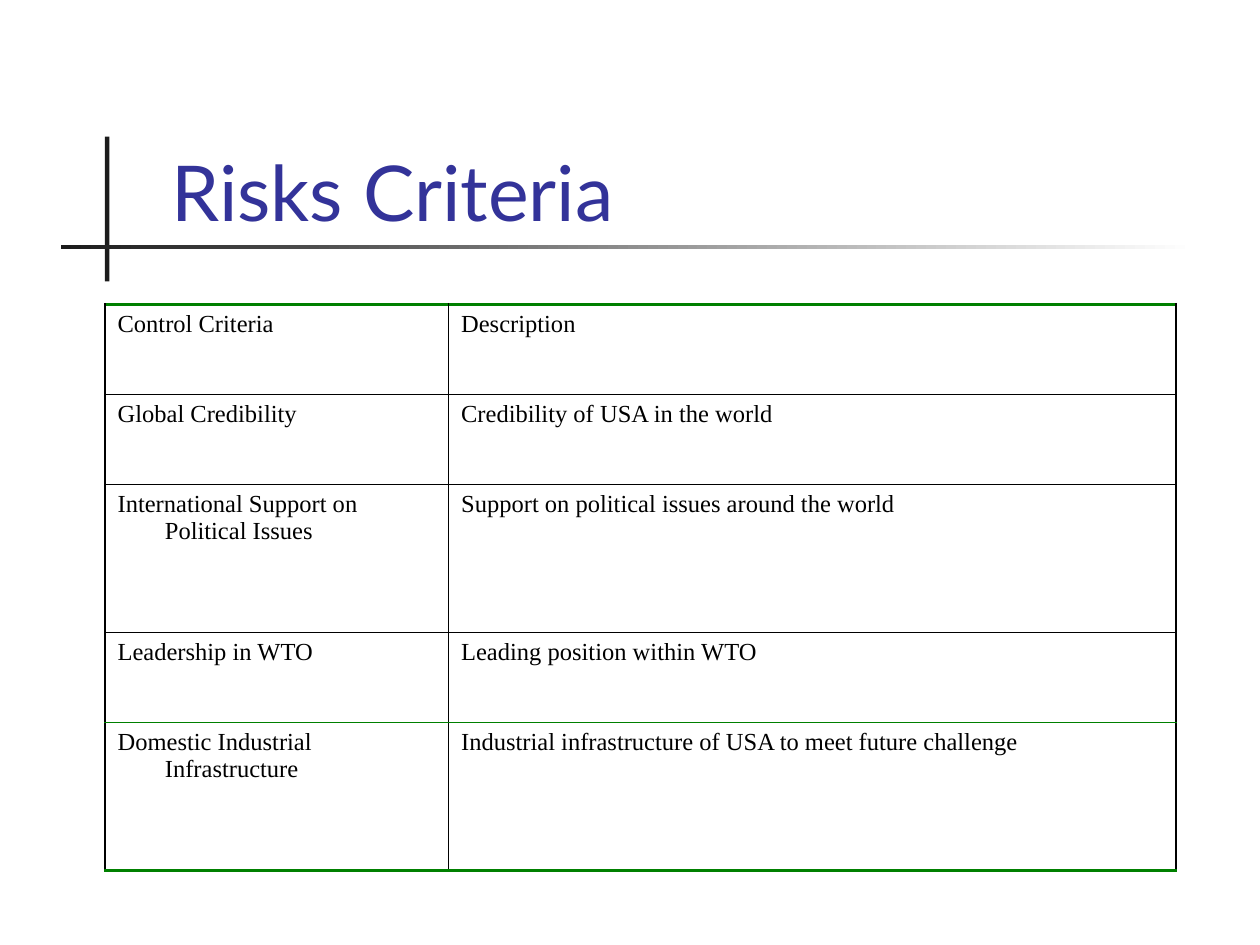
import pptx
import pptx.util
import pptx.dml.color
import pptx.enum.shapes
import pptx.enum.text
import pptx.oxml
import pptx.oxml.ns

Pt = pptx.util.Pt
BLACK, GREEN, DARK = "000000", "008000", "1C1C1C"
ROWS = [
    ("Control Criteria", "Description"),
    ("Global Credibility", "Credibility of USA in the world"),
    ("International Support on Political Issues",
     "Support on political issues around the world"),
    ("Leadership in WTO", "Leading position within WTO"),
    ("Domestic Industrial Infrastructure",
     "Industrial infrastructure of USA to meet future challenge"),
]
SHORT, TALL = 51.4, 84.7
HEIGHTS = [SHORT, SHORT, TALL, SHORT, TALL]
WIDTHS = [196.3, 415.7]
RULES = [(GREEN, 2), (BLACK, 1), (BLACK, 0.75),
         (BLACK, 0.75), (GREEN, 1), (GREEN, 2)]
SIDE = (BLACK, 0.75)


def color(code):
    return pptx.dml.color.RGBColor.from_string(code)


def style(para, face, size, code):
    para.font.name = face
    para.font.size = Pt(size)
    para.font.color.rgb = color(code)


def add_bar(slide, left, top, width, height, fade=None):
    bar = slide.shapes.add_shape(
        pptx.enum.shapes.MSO_SHAPE.RECTANGLE,
        Pt(left), Pt(top), Pt(width), Pt(height))
    bar.shadow.inherit = False
    bar.line.fill.background()
    if fade:
        bar.fill.gradient()
        bar.fill.gradient_angle = 0
        for stop, code in zip(bar.fill.gradient_stops, (DARK, fade)):
            stop.color.rgb = color(code)
    else:
        bar.fill.solid()
        bar.fill.fore_color.rgb = color(DARK)


def set_title(slide, text):
    title = slide.shapes.title
    title.left, title.top = Pt(90.7), Pt(49)
    title.width, title.height = Pt(613.4), Pt(90)
    frame = title.text_frame
    frame.text = text
    frame.vertical_anchor = pptx.enum.text.MSO_ANCHOR.BOTTOM
    para = frame.paragraphs[0]
    para.alignment = pptx.enum.text.PP_ALIGN.LEFT
    style(para, "Lato", 44, "333399")


def add_edge(cell, tag, code, width):
    line = pptx.oxml.parse_xml(
        f'<a:{tag} {pptx.oxml.ns.nsdecls("a")} w="{Pt(width)}">'
        f'<a:solidFill><a:srgbClr val="{code}"/></a:solidFill></a:{tag}>')
    cell._tc.get_or_add_tcPr().append(line)


def fill_cell(cell, text, above, below):
    edges = {"lnL": SIDE, "lnR": SIDE, "lnT": above, "lnB": below}
    for tag, edge in edges.items():
        add_edge(cell, tag, *edge)
    cell.fill.background()
    cell.text = text
    para = cell.text_frame.paragraphs[0]
    style(para, "Times New Roman", 14, BLACK)
    props = para._p.get_or_add_pPr()
    props.set("marL", str(Pt(27)))
    props.set("indent", str(Pt(-27)))


def add_grid(slide):
    table = slide.shapes.add_table(
        len(ROWS), len(WIDTHS), Pt(60), Pt(174),
        Pt(sum(WIDTHS)), Pt(sum(HEIGHTS))).table
    table.first_row = False
    table.horz_banding = False
    for col, width in zip(table.columns, WIDTHS):
        col.width = Pt(width)
    for r, (texts, height) in enumerate(zip(ROWS, HEIGHTS)):
        table.rows[r].height = Pt(height)
        for c, text in enumerate(texts):
            fill_cell(table.cell(r, c), text, RULES[r], RULES[r + 1])


def main():
    deck = pptx.Presentation()
    deck.slide_width, deck.slide_height = Pt(720), Pt(540)
    slide = deck.slides.add_slide(deck.slide_layouts[5])
    add_bar(slide, 60, 78, 2.5, 82.8)
    add_bar(slide, 34.8, 140, 648, 2.5, fade="FFFFFF")
    set_title(slide, "Risks Criteria")
    add_grid(slide)
    deck.save("out.pptx")


if __name__ == "__main__":
    main()
